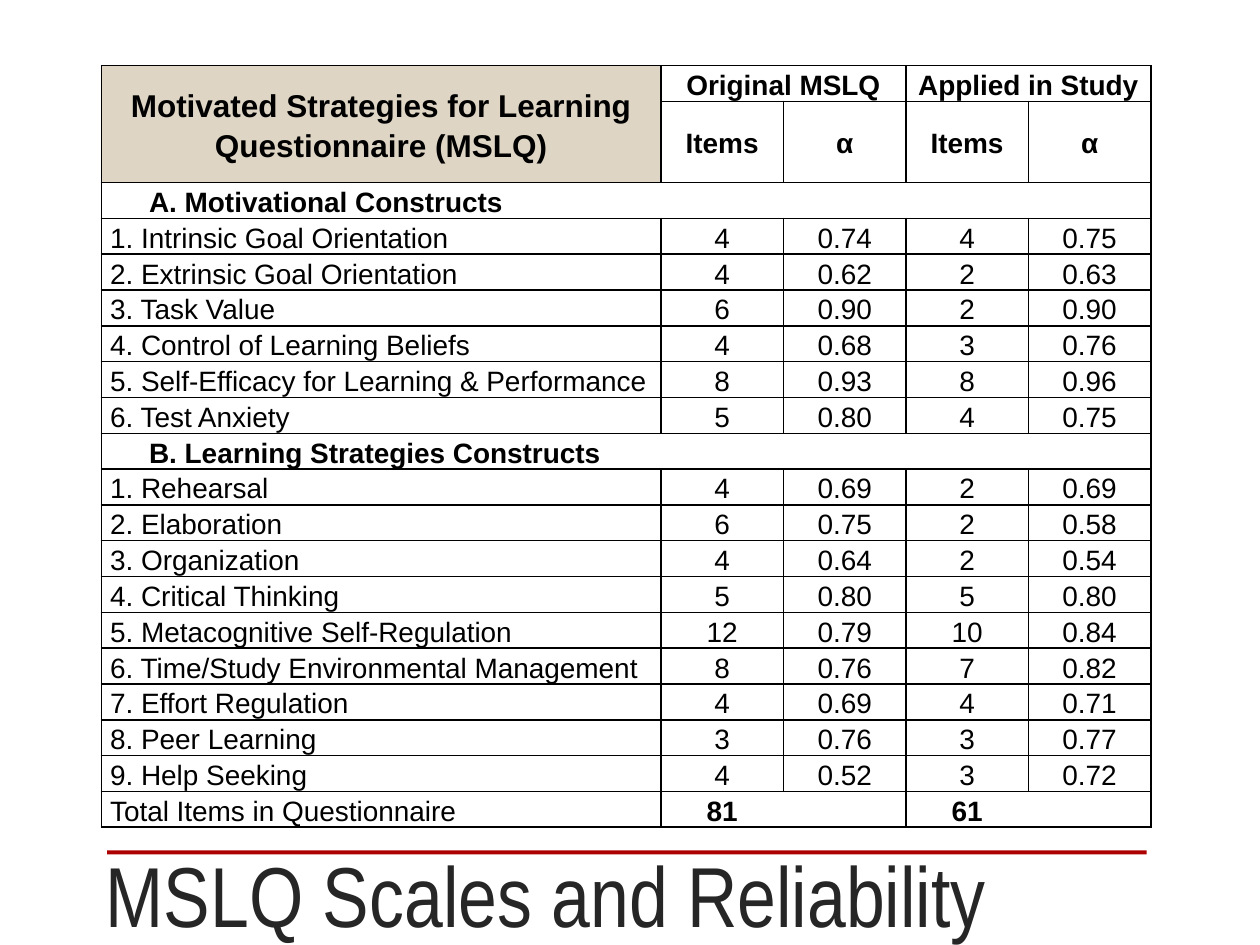
"""Build the MSLQ scales and reliability slide."""
from lxml import etree
from pptx import Presentation
from pptx import util as u
from pptx.dml.color import RGBColor
from pptx.enum import shapes, text
from pptx.oxml.ns import qn

Pt = u.Pt

TITLE = "MSLQ Scales and Reliability"
HEADER = [
    ("Motivated Strategies for Learning Questionnaire (MSLQ)",
     "Original MSLQ", "", "Applied in Study", ""),
    ("", "Items", "α", "Items", "α"),
]
SECTIONS = {
    "A. Motivational Constructs": [
        ("Intrinsic Goal Orientation", "4", "0.74", "4", "0.75"),
        ("Extrinsic Goal Orientation", "4", "0.62", "2", "0.63"),
        ("Task Value", "6", "0.90", "2", "0.90"),
        ("Control of Learning Beliefs", "4", "0.68", "3", "0.76"),
        ("Self-Efficacy for Learning & Performance", "8", "0.93", "8", "0.96"),
        ("Test Anxiety", "5", "0.80", "4", "0.75"),
    ],
    "B. Learning Strategies Constructs": [
        ("Rehearsal", "4", "0.69", "2", "0.69"),
        ("Elaboration", "6", "0.75", "2", "0.58"),
        ("Organization", "4", "0.64", "2", "0.54"),
        ("Critical Thinking", "5", "0.80", "5", "0.80"),
        ("Metacognitive Self-Regulation", "12", "0.79", "10", "0.84"),
        ("Time/Study Environmental Management", "8", "0.76", "7", "0.82"),
        ("Effort Regulation", "4", "0.69", "4", "0.71"),
        ("Peer Learning", "3", "0.76", "3", "0.77"),
        ("Help Seeking", "4", "0.52", "3", "0.72"),
    ],
}
TOTAL = ("Total Items in Questionnaire", "81", "", "61", "")

THEME = {
    "ink": "000000", "title": "262626", "rule": "AD0101", "head": "DED5C5",
    "body_font": "Arial", "title_font": "Arial Narrow",
    "body_size": 16, "head_size": 18, "title_size": 48.6,
}
SLIDE = (720, 540)
TITLE_BOX = (53.3, 483.8, 594.7, 59.5)
RULE_BOX = (61.2, 486, 594, 2.2)
TABLE_AT = (57.9, 37.5)
COLS = [319.8] + [70] * 4
ROW_H, SUBHEAD_H = 20.48, 46.3
INSET, SECTION_INSET = 5, 27.3


def rgb(key):
    return RGBColor.from_string(THEME[key])


def apply(target, values):
    for name, value in values.items():
        setattr(target, name, value)


def style_font(font, face, size, color, bold=False):
    apply(font, {"name": THEME[face], "size": Pt(THEME[size]), "bold": bold})
    font.color.rgb = rgb(color)


def add_borders(cell, hidden):
    tc_pr = cell._tc.get_or_add_tcPr()
    for side in "LRTB":
        ln = etree.SubElement(tc_pr, qn(f"a:ln{side}"), w=str(Pt(1)))
        if side == hidden:
            etree.SubElement(ln, qn("a:noFill"))
        else:
            fill = etree.SubElement(ln, qn("a:solidFill"))
            etree.SubElement(fill, qn("a:srgbClr"), val=THEME["ink"])


def fill_cell(cell, words, centred, bold, size="body_size", left=INSET,
              fill=None, hidden=None):
    apply(cell, {"margin_left": Pt(left), "margin_right": Pt(INSET),
                 "margin_top": 0, "margin_bottom": 0,
                 "vertical_anchor": text.MSO_ANCHOR.MIDDLE})
    add_borders(cell, hidden)
    if fill:
        cell.fill.solid()
        cell.fill.fore_color.rgb = rgb(fill)
    else:
        cell.fill.background()
    p = cell.text_frame.paragraphs[0]
    align = text.PP_ALIGN.CENTER if centred else text.PP_ALIGN.LEFT
    apply(p, {"alignment": align, "line_spacing": 1.15})
    r = p.add_run()
    r.text = words
    style_font(r.font, "body_font", size, "ink", bold)


def add_scales_table(s):
    rows, section_rows = list(HEADER), []
    for name, scales in SECTIONS.items():
        section_rows.append(len(rows))
        rows.append((name, "", "", "", ""))
        rows += [(f"{n}. {scale}", *values)
                 for n, (scale, *values) in enumerate(scales, 1)]
    rows.append(TOTAL)
    last = len(rows) - 1
    heights = [ROW_H, SUBHEAD_H] + [ROW_H] * (last - 1)

    table = s.shapes.add_table(len(rows), len(COLS), *map(Pt, TABLE_AT),
                               Pt(sum(COLS)), Pt(sum(heights))).table
    apply(table, {"first_row": False, "horz_banding": False})
    for column, width in zip(table.columns, COLS):
        column.width = Pt(width)
    for i, (row, height) in enumerate(zip(rows, heights)):
        table.rows[i].height = Pt(height)
        header, section = i < len(HEADER), i in section_rows
        for j, words in enumerate(row):
            style = {"centred": header or j > 0,
                     "bold": header or section or (i == last and j > 0)}
            if header and j == 0:
                style.update(size="head_size", fill="head")
            if section:
                style["left"] = SECTION_INSET
            if i == last and j > 0:
                style["hidden"] = "R" if j % 2 else "L"
            fill_cell(table.cell(i, j), words, **style)

    spans = [((0, 0), (1, 0)), ((0, 1), (0, 2)), ((0, 3), (0, 4))]
    spans += [((i, 0), (i, len(COLS) - 1)) for i in section_rows]
    for start, end in spans:
        table.cell(*start).merge(table.cell(*end))


def add_title(s):
    sp = s.shapes.title
    apply(sp, dict(zip(("left", "top", "width", "height"), map(Pt, TITLE_BOX))))
    tf = sp.text_frame
    apply(tf, {"word_wrap": True, "auto_size": text.MSO_AUTO_SIZE.NONE,
               "vertical_anchor": text.MSO_ANCHOR.BOTTOM})
    p = tf.paragraphs[0]
    p.alignment = text.PP_ALIGN.LEFT
    r = p.add_run()
    r.text = TITLE
    style_font(r.font, "title_font", "title_size", "title")


def add_rule(s):
    sp = s.shapes.add_shape(shapes.MSO_SHAPE.RECTANGLE, *map(Pt, RULE_BOX))
    sp.shadow.inherit = False
    sp.fill.solid()
    sp.fill.fore_color.rgb = rgb("rule")
    sp.line.fill.background()


def main():
    prs = Presentation()
    prs.slide_width, prs.slide_height = map(Pt, SLIDE)
    s = prs.slides.add_slide(prs.slide_layouts[5])
    add_rule(s)
    add_title(s)
    add_scales_table(s)
    prs.save("out.pptx")


if __name__ == "__main__":
    main()
